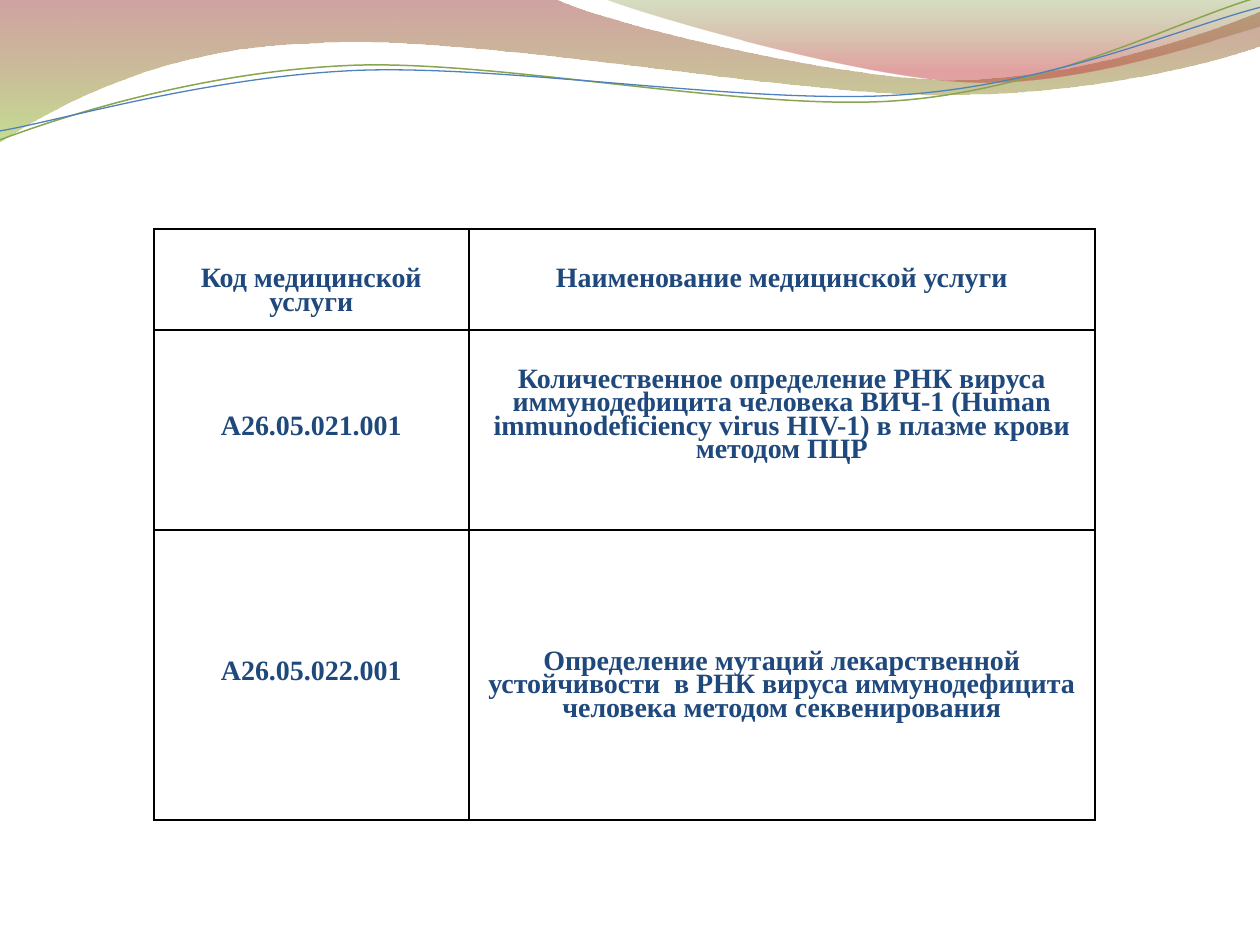
from lxml import etree
from pptx import Presentation
from pptx.dml.color import RGBColor
from pptx.enum.text import MSO_ANCHOR, PP_ALIGN
from pptx.oxml.ns import qn
from pptx.util import Cm, Pt

CENTER, MIDDLE, TOP = PP_ALIGN.CENTER, MSO_ANCHOR.MIDDLE, MSO_ANCHOR.TOP
WHITE = RGBColor(0xFF, 0xFF, 0xFF)
BLACK = RGBColor(0x00, 0x00, 0x00)
NAVY = RGBColor(0x1F, 0x49, 0x7D)
RED = RGBColor(0x97, 0x33, 0x30)
LIME = RGBColor(0x95, 0xC2, 0x38)
OLIVE = RGBColor(0x76, 0x95, 0x37)
CRIMSON = RGBColor(0xBE, 0x33, 0x30)
GREEN = RGBColor(0x89, 0xA5, 0x4F)
BLUE = RGBColor(0x4F, 0x81, 0xBD)


def add_path(shapes, start, pieces, close):
    """Draw pieces in cm: one point is a straight line, three are a Bézier curve."""
    builder = shapes.build_freeform(Cm(start[0]), Cm(start[1]))
    builder.add_line_segments([(Cm(x), Cm(y)) for piece in pieces for x, y in piece],
                              close=close)
    s = builder.convert_to_shape()
    s.shadow.inherit = False
    segments = iter(list(s._element.iter(qn("a:lnTo"))))
    for piece in pieces:
        first, *others = [next(segments) for _ in piece]
        if others:
            curve = etree.Element(qn("a:cubicBezTo"))
            first.addprevious(curve)
            for segment in (first, *others):
                curve.append(segment[0])
                segment.getparent().remove(segment)
    return s


def add_borders(cell, color, width):
    tc_pr = cell._tc.get_or_add_tcPr()
    for side in ("lnL", "lnR", "lnT", "lnB"):
        ln = etree.SubElement(tc_pr, qn(f"a:{side}"), w=str(width))
        fill = etree.SubElement(ln, qn("a:solidFill"))
        etree.SubElement(fill, qn("a:srgbClr"), val=str(color))


prs = Presentation()
prs.slide_width, prs.slide_height = Cm(25.4), Cm(19.05)
slide = prs.slides.add_slide(prs.slide_layouts[6])
shapes = slide.shapes

# Wave bands: start, pieces, gradient stops (position, colour, opacity in %)
bands = [
    ((0, 0),
     [[(11.18, -0.03)],
      [(12.09, 0.43), (16.87, 1.6), (19.25, 1.6)],
      [(21.67, 1.6), (24.33, 0.66), (25.4, 0.23)],
      [(25.43, 0.91)],
      [(24.97, 1.12), (22.1, 1.93), (18.95, 1.91)],
      [(15.8, 1.91), (9.7, 0.71), (6.53, 0.86)],
      [(3.28, 0.91), (1.17, 2.11), (-0.03, 2.87)]],
     [(0, RED, 45), (1, LIME, 55)]),
    ((12.17, -0.03),
     [[(12.93, 0.28), (17.32, 1.57), (19.53, 1.65)],
      [(21.74, 1.75), (24.41, 0.81), (25.4, 0.53)],
      [(25.4, 0)]],
     [(0, OLIVE, 30), (0.8, CRIMSON, 45)]),
]
for start, pieces, stops in bands:
    s = add_path(shapes, start, pieces, close=True)
    s.line.fill.background()
    s.fill.gradient()
    s.fill.gradient_angle = 270
    for stop, (position, color, _) in zip(s.fill.gradient_stops, stops):
        stop.position = position
        stop.color.rgb = color
    for clr, (_, _, opacity) in zip(s._element.spPr.iter(qn("a:srgbClr")), stops):
        etree.SubElement(clr, qn("a:alpha"), val=str(opacity * 1000))

# Thin wave lines: start, pieces, colour, width
lines = [
    ((0, 2.82),
     [[(1.22, 2.36), (4.01, 1.45), (7.04, 1.32)],
      [(10.03, 1.19), (15.06, 2.26), (18.11, 2.03)],
      [(21.16, 1.8), (23.83, 0.38), (25.35, -0.05)]],
     GREEN, 0.85),
    ((0, 2.64),
     [[(1.19, 2.44), (4.17, 1.55), (7.19, 1.42)],
      [(10.24, 1.3), (15.16, 2.13), (18.21, 1.91)],
      [(21.23, 1.7), (23.9, 0.53), (25.4, 0.15)]],
     BLUE, 0.75),
]
for start, pieces, color, width in lines:
    s = add_path(shapes, start, pieces, close=False)
    s.fill.background()
    s.line.color.rgb = color
    s.line.width = Pt(width)

# Services table: each cell is text, anchor, top margin in cm
rows = [
    [("Код медицинской услуги", TOP, 0.83),
     ("Наименование медицинской услуги", TOP, 0.83)],
    [("A26.05.021.001", MIDDLE, 0),
     ("Количественное определение РНК вируса иммунодефицита человека ВИЧ-1 "
      "(Human immunodeficiency virus HIV-1) в плазме крови методом ПЦР", TOP, 0.82)],
    [("A26.05.022.001", MIDDLE, 0),
     ("Определение мутаций лекарственной устойчивости  в РНК вируса "
      "иммунодефицита человека методом секвенирования", TOP, 2.47)],
]
col_widths = [6.35, 12.62]
row_heights = [2.03, 4.04, 5.84]
table = shapes.add_table(len(rows), len(col_widths), Cm(3.1), Cm(4.62),
                         Cm(sum(col_widths)), Cm(sum(row_heights))).table
table.first_row = table.horz_banding = False
for col, width in zip(table.columns, col_widths):
    col.width = Cm(width)
for row, height, contents in zip(table.rows, row_heights, rows):
    row.height = Cm(height)
    for cell, (text, anchor, margin_top) in zip(row.cells, contents):
        add_borders(cell, BLACK, Pt(1))
        cell.fill.solid()
        cell.fill.fore_color.rgb = WHITE
        cell.vertical_anchor = anchor
        cell.margin_left = cell.margin_right = Cm(0.1)
        cell.margin_top, cell.margin_bottom = Cm(margin_top), 0
        cell.text_frame.text = text
        p = cell.text_frame.paragraphs[0]
        p.alignment = CENTER
        p.line_spacing = Pt(13.5)
        p.space_after = Pt(10)
        font = p.runs[0].font
        font.name = "Times New Roman"
        font.size = Pt(16)
        font.bold = True
        font.color.rgb = NAVY

prs.save("out.pptx")
